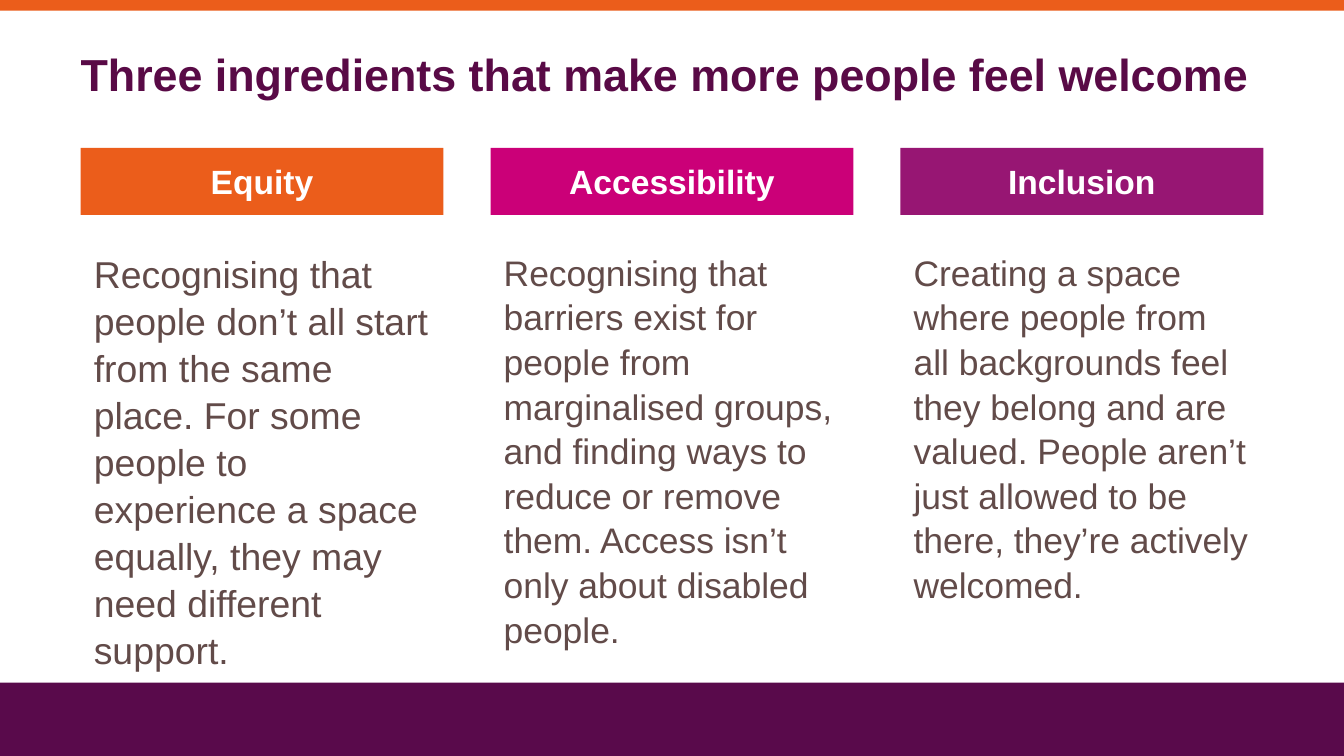
from pptx import Presentation
from pptx.dml.color import RGBColor
from pptx.enum.shapes import MSO_SHAPE
from pptx.enum.text import MSO_ANCHOR, PP_ALIGN
from pptx.util import Pt

RECTANGLE = MSO_SHAPE.RECTANGLE
MIDDLE = MSO_ANCHOR.MIDDLE
LEFT, CENTER = PP_ALIGN.LEFT, PP_ALIGN.CENTER

ORANGE = RGBColor(0xEB, 0x5D, 0x1B)
PINK = RGBColor(0xCB, 0x00, 0x78)
PURPLE = RGBColor(0x97, 0x16, 0x73)
FOOTER_PLUM = RGBColor(0x59, 0x0A, 0x4B)
TITLE_PLUM = RGBColor(0x59, 0x0A, 0x46)
BROWN = RGBColor(0x62, 0x4B, 0x49)
WHITE = RGBColor(0xFF, 0xFF, 0xFF)

SLIDE_W, SLIDE_H = 720, 405
MARGIN = 43.2
COLUMN_W, COLUMN_STEP = 194.4, 219.6
FOOTER_TOP = 365.76

prs = Presentation()
prs.slide_width, prs.slide_height = Pt(SLIDE_W), Pt(SLIDE_H)
slide = prs.slides.add_slide(prs.slide_layouts[6])


def add_bar(left, top, width, height, color):
    bar = slide.shapes.add_shape(RECTANGLE, Pt(left), Pt(top), Pt(width), Pt(height))
    bar.shadow.inherit = False
    bar.fill.solid()
    bar.fill.fore_color.rgb = color
    bar.line.fill.background()
    return bar


def write(shape, text, size, color, bold=False, align=LEFT):
    shape.text_frame.word_wrap = True
    paragraph = shape.text_frame.paragraphs[0]
    paragraph.text = text
    paragraph.alignment = align
    font = paragraph.font
    font.name, font.size, font.bold = "Arial", Pt(size), bold
    font.color.rgb = color
    return paragraph


# Footer and top bands
add_bar(0, FOOTER_TOP, SLIDE_W, SLIDE_H - FOOTER_TOP, FOOTER_PLUM)
add_bar(0, 0, SLIDE_W, 5.76, ORANGE)

# Title
title = slide.shapes.add_textbox(Pt(MARGIN), Pt(14.4), Pt(SLIDE_W - 2 * MARGIN), Pt(50.4))
title_frame = title.text_frame
title_frame.margin_left = title_frame.margin_right = 0
title_frame.margin_top = title_frame.margin_bottom = 0
title_frame.vertical_anchor = MIDDLE
write(title, "Three ingredients that make more people feel welcome", 24, TITLE_PLUM, bold=True)

# Ingredient columns: heading, colour, description, description size
ingredients = [
    ("Equity", ORANGE,
     "Recognising that people don’t all start from the same place. For some people "
     "to experience a space equally, they may need different support.", 20),
    ("Accessibility", PINK,
     "Recognising that barriers exist for people from marginalised groups, and finding "
     "ways to reduce or remove them. Access isn’t only about disabled people.", 19),
    ("Inclusion", PURPLE,
     "Creating a space where people from all backgrounds feel they belong and are valued. "
     "People aren’t just allowed to be there, they’re actively welcomed.", 19),
]
for column, (name, color, meaning, size) in enumerate(ingredients):
    left = MARGIN + column * COLUMN_STEP

    heading = add_bar(left, 79.2, COLUMN_W, 36, color)
    heading.text_frame.vertical_anchor = MIDDLE
    write(heading, name, 18, WHITE, bold=True, align=CENTER)

    description = slide.shapes.add_textbox(Pt(left), Pt(129.6), Pt(COLUMN_W), Pt(100.8))
    write(description, meaning, size, BROWN).line_spacing = 1.05

prs.save("out.pptx")
